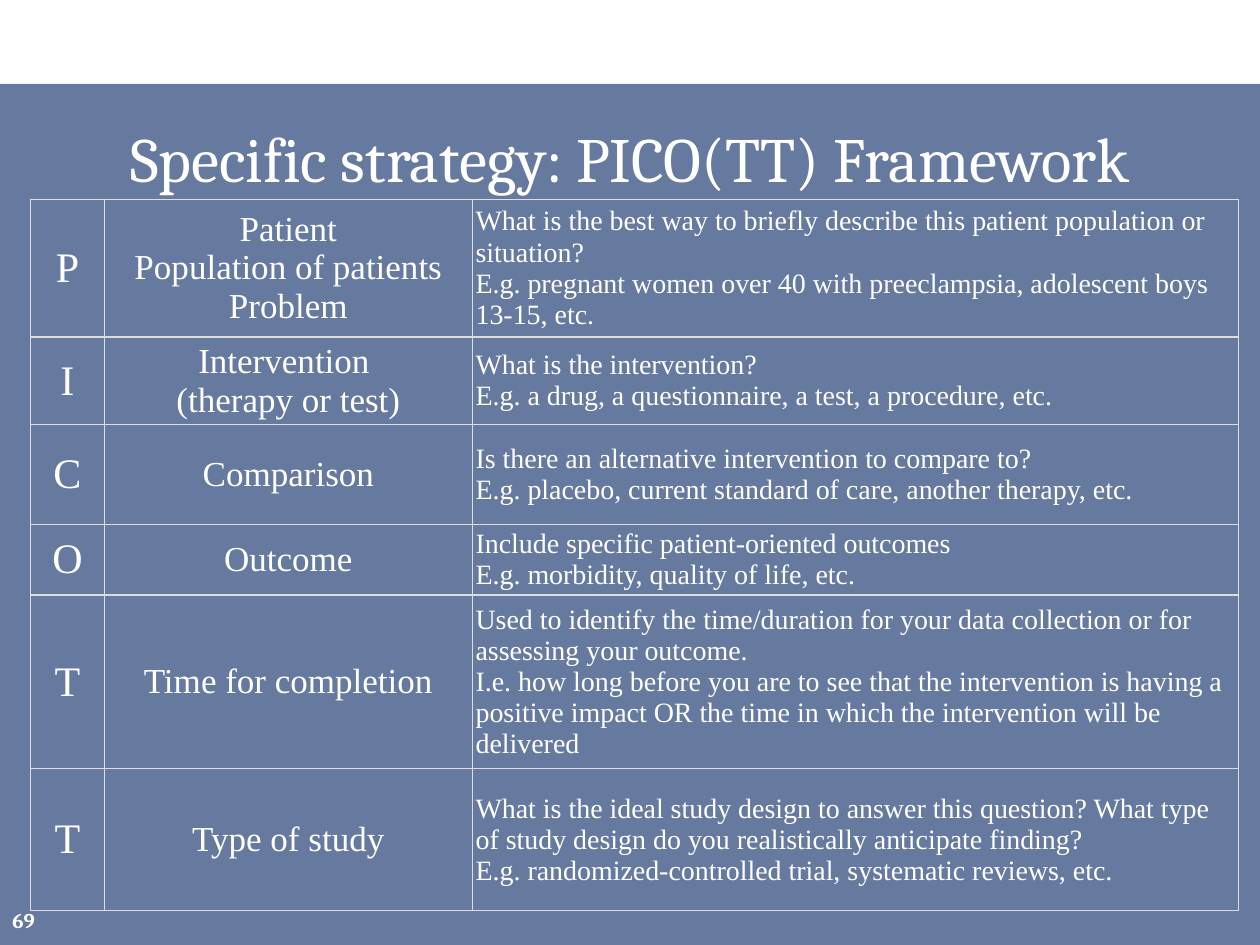
from dataclasses import dataclass
from lxml.etree import SubElement as Sub
from pptx import Presentation
from pptx.dml.color import RGBColor as RGB
from pptx.enum.shapes import MSO_SHAPE as Shape
from pptx.enum.text import MSO_ANCHOR as Anchor, PP_ALIGN as Align
from pptx.oxml.ns import qn
from pptx.util import Pt


@dataclass(frozen=True)
class Theme:
    """Colours, fonts and type sizes of the slide."""
    navy: str = "002060"
    alpha: int = 60000
    rule: str = "DDDDDD"
    ink: str = "FFFFFF"
    head: str = "Cambria"
    body: str = "Times New Roman"
    title: int = 36
    sizes: tuple = (24, 20, 16)
    page: int = 12


LOOK = Theme()
COLS = (42.5, 210, 438)
HEIGHTS = (75, 46.6, 57, 39, 99.4, 81)
ALIGNS = (Align.CENTER, Align.CENTER, Align.LEFT)
ROWS = [
    ("P", "Patient\nPopulation of patients\nProblem",
     "What is the best way to briefly describe this patient population or situation?\n"
     "E.g. pregnant women over 40 with preeclampsia, adolescent boys 13-15, etc."),
    ("I", "Intervention \n(therapy or test)",
     "What is the intervention?\n"
     "E.g. a drug, a questionnaire, a test, a procedure, etc."),
    ("C", "Comparison",
     "Is there an alternative intervention to compare to?\n"
     "E.g. placebo, current standard of care, another therapy, etc."),
    ("O", "Outcome",
     "Include specific patient-oriented outcomes\n"
     "E.g. morbidity, quality of life, etc."),
    ("T", "Time for completion",
     "Used to identify the time/duration for your data collection or for "
     "assessing your outcome.\n"
     "I.e. how long before you are to see that the intervention is having a "
     "positive impact OR the time in which the intervention will be delivered"),
    ("T", "Type of study",
     "What is the ideal study design to answer this question? What type of "
     "study design do you realistically anticipate finding?\n"
     "E.g. randomized-controlled trial, systematic reviews, etc."),
]


def assign(item, values):
    """Set each named attribute on an item."""
    for name, value in values.items():
        setattr(item, name, value)


def write(frame, text, align, **font):
    """Fill a text frame, one paragraph a line."""
    frame.text = text
    for para in frame.paragraphs:
        para.alignment = align
        assign(para.font, font)
        para.font.color.rgb = RGB.from_string(LOOK.ink)


def panel(slide, box):
    """Draw the translucent panel behind the content."""
    shape = slide.shapes.add_shape(Shape.RECTANGLE, *map(Pt, box))
    shape.shadow.inherit = False
    shape.fill.solid()
    shape.fill.fore_color.rgb = RGB.from_string(LOOK.navy)
    shape.line.fill.background()
    tint = shape.fill._xPr.find(".//" + qn("a:srgbClr"))
    Sub(tint, qn("a:alpha"), val=str(LOOK.alpha))


def label(slide, box, text, align, **font):
    """Place one line of text, centred vertically in its box."""
    frame = slide.shapes.add_textbox(*map(Pt, box)).text_frame
    assign(frame, {"word_wrap": True, "vertical_anchor": Anchor.MIDDLE})
    write(frame, text, align, name=LOOK.head, **font)


def border(cell):
    """Rule all four sides of a cell."""
    props = cell._tc.get_or_add_tcPr()
    for side in "LRTB":
        line = Sub(props, qn("a:ln" + side), w=str(Pt(0.75)))
        fill = Sub(line, qn("a:solidFill"))
        Sub(fill, qn("a:srgbClr"), val=LOOK.rule)


def grid(slide, box):
    """Build the framework table."""
    table = slide.shapes.add_table(len(ROWS), len(COLS), *map(Pt, box)).table
    assign(table, {"first_row": False, "horz_banding": False})
    for col, width in zip(table.columns, COLS):
        col.width = Pt(width)
    for row, height, texts in zip(table.rows, HEIGHTS, ROWS):
        row.height = Pt(height)
        for cell, text, align, size in zip(row.cells, texts, ALIGNS, LOOK.sizes):
            assign(cell, {"margin_left": Pt(2), "margin_right": Pt(2),
                          "margin_top": Pt(1), "margin_bottom": Pt(1),
                          "vertical_anchor": Anchor.MIDDLE})
            border(cell)
            cell.fill.background()
            write(cell.text_frame, text, align, name=LOOK.body, size=Pt(size))


def main():
    """Build and save the slide."""
    deck = Presentation()
    assign(deck, {"slide_width": Pt(720), "slide_height": Pt(540)})
    slide = deck.slides.add_slide(deck.slide_layouts[6])
    panel(slide, (0, 48, 720, 492))
    label(slide, (18, 60, 684, 60), "Specific strategy: PICO(TT) Framework",
          Align.CENTER, size=Pt(LOOK.title))
    grid(slide, (17.3, 113.8, sum(COLS), sum(HEIGHTS)))
    label(slide, (0, 511, 36, 29), "69", Align.LEFT,
          size=Pt(LOOK.page), bold=True)
    deck.save("out.pptx")


if __name__ == "__main__":
    main()
